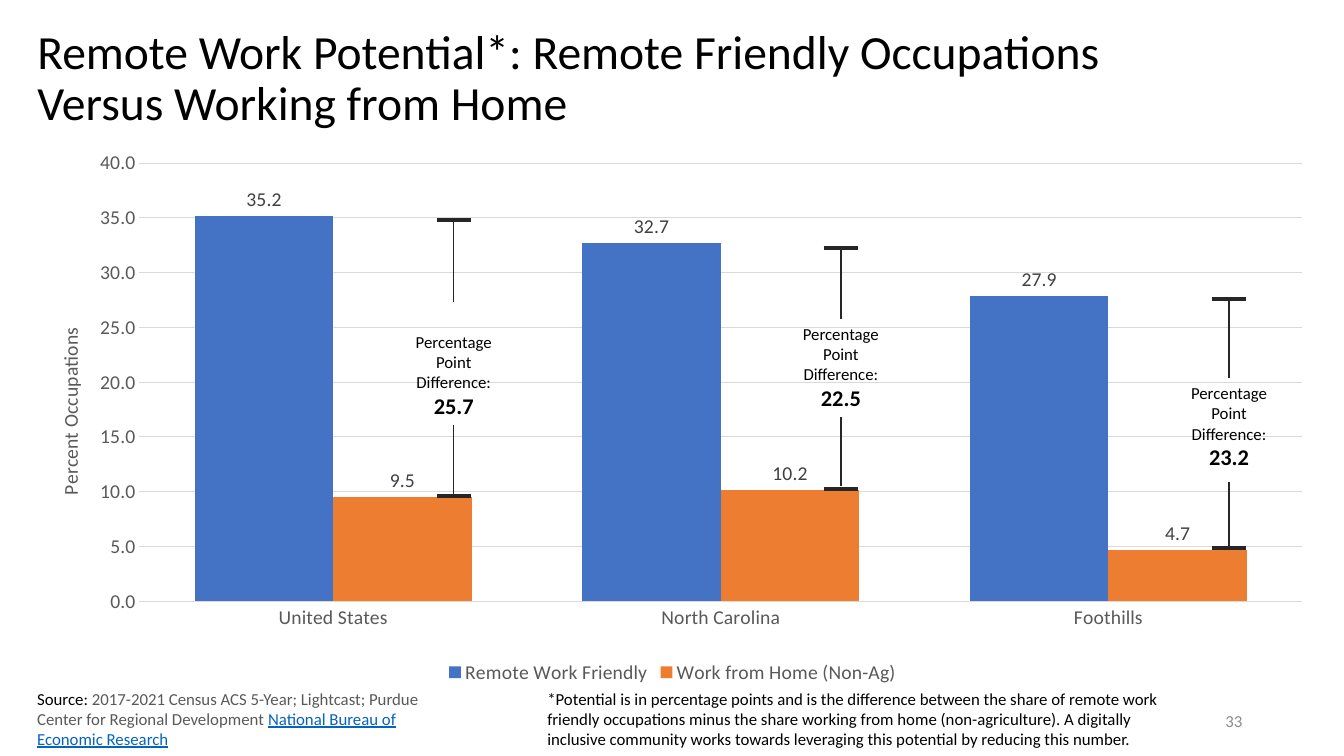
from dataclasses import dataclass
from typing import Any

from lxml.etree import SubElement
from pptx import Presentation
from pptx.chart.data import CategoryChartData
from pptx.dml.color import RGBColor
from pptx.enum.chart import XL_CHART_TYPE, XL_LABEL_POSITION, XL_LEGEND_POSITION, XL_TICK_MARK
from pptx.enum.shapes import MSO_CONNECTOR
from pptx.enum.text import MSO_ANCHOR, MSO_AUTO_SIZE, PP_ALIGN
from pptx.oxml import parse_xml
from pptx.oxml.ns import nsdecls, qn
from pptx.shapes.connector import Connector
from pptx.slide import Slide
from pptx.util import Pt

PX = 9144  # 100 px to the inch
COLORS = {
    "text": "000000",
    "muted": "595959",
    "label": "404040",
    "number": "8C8C8C",
    "link": "0563C1",
    "grid": "D9D9D9",
    "bracket": "262626",
    "remote": "4472C4",
    "home": "ED7D31",
}
TOP, BOTTOM = 0, 2
CAP_WIDTH = 34
NOTE_WIDTH, NOTE_HEIGHT = 132, 98


@dataclass(frozen=True)
class Span:
    text: str
    size: int = 12
    color: str = "text"
    bold: bool = False
    underline: bool = False


@dataclass(frozen=True)
class Gap:
    """Bracket between two bars: cap heights, stem ends and the note between them."""
    value: str
    center: int
    upper_cap: int
    upper_end: int
    note_top: int
    lower_start: int
    lower_end: int
    lower_cap: int


GAPS = [
    Gap("25.7", 450, 218, 300, 324, 424, 491, 492),
    Gap("22.5", 834, 246, 316, 316, 414, 482, 485),
    Gap("23.2", 1219, 297, 375, 375, 478, 543, 544),
]
SOURCE = [
    Span("Source: "),
    Span("2017-2021 Census ACS 5-Year; Lightcast; Purdue Center for Regional Development ",
         color="muted"),
    Span("National Bureau of Economic Research", color="link", underline=True),
]
FOOTNOTE = [Span(
    "*Potential is in percentage points and is the difference between the share of remote work "
    "friendly occupations minus the share working from home (non-agriculture). A digitally "
    "inclusive community works towards leveraging this potential by reducing this number."
)]


def rgb(name: str) -> RGBColor:
    return RGBColor.from_string(COLORS[name])


def set_attributes(target: Any, values: dict[str, Any]) -> None:
    for name, value in values.items():
        setattr(target, name, value)


def style_font(font: Any, size: int, color: str, **extra: bool) -> None:
    set_attributes(font, {"name": "Calibri", "size": Pt(size), **extra})
    font.color.rgb = rgb(color)


def add_text(slide: Slide, box: tuple[int, int, int, int], paragraphs: list[list[Span]],
             align: PP_ALIGN = PP_ALIGN.LEFT, **frame_format: Any) -> Any:
    """Add a wrapping text box; a span that ends in a newline is followed by a line break."""
    shape = slide.shapes.add_textbox(*(length * PX for length in box))
    frame = shape.text_frame
    set_attributes(frame, {"word_wrap": True, "auto_size": MSO_AUTO_SIZE.SHAPE_TO_FIT_TEXT,
                           **frame_format})
    for index, spans in enumerate(paragraphs):
        paragraph = frame.add_paragraph() if index else frame.paragraphs[0]
        paragraph.alignment = align
        for span in spans:
            run = paragraph.add_run()
            run.text = span.text.rstrip("\n")
            style_font(run.font, span.size, span.color, bold=span.bold, underline=span.underline)
            if span.text.endswith("\n"):
                paragraph.add_line_break()
    return shape


def add_line(slide: Slide, start: tuple[int, int], end: tuple[int, int],
             weight: int) -> Connector:
    line = slide.shapes.add_connector(
        MSO_CONNECTOR.STRAIGHT, *(length * PX for length in (*start, *end)))
    line.line.color.rgb = rgb("bracket")
    line.line.width = Pt(weight)
    SubElement(line._element.spPr, qn("a:effectLst"))
    return line


def add_gap(slide: Slide, gap: Gap) -> None:
    note = add_text(
        slide, (gap.center - NOTE_WIDTH // 2, gap.note_top, NOTE_WIDTH, NOTE_HEIGHT),
        [[Span("Percentage\n"), Span("Point")],
         [Span("Difference:\n"), Span(gap.value, size=16, bold=True)]],
        PP_ALIGN.CENTER)
    for cap in (gap.lower_cap, gap.upper_cap):
        left = gap.center - CAP_WIDTH // 2
        add_line(slide, (left, cap), (left + CAP_WIDTH, cap), 3)
    upper = add_line(slide, (gap.center, gap.upper_cap), (gap.center, gap.upper_end), 1)
    lower = add_line(slide, (gap.center, gap.lower_start), (gap.center, gap.lower_end), 1)
    if gap.upper_end == gap.note_top:
        upper.end_connect(note, TOP)
    if abs(gap.lower_start - gap.note_top - NOTE_HEIGHT) <= 2:
        lower.begin_connect(note, BOTTOM)


def place_manually(parent: Any, index: int, **values: Any) -> None:
    """Give a chart part a manual layout in fractions of the chart."""
    for layout in parent.findall(qn("c:layout")):
        parent.remove(layout)
    settings = "".join(f'<c:{name} val="{value}"/>' for name, value in values.items())
    parent.insert(index, parse_xml(
        f'<c:layout {nsdecls("c")}><c:manualLayout>{settings}</c:manualLayout></c:layout>'))


def style_axes(chart: Any) -> None:
    category_axis, value_axis = chart.category_axis, chart.value_axis
    for axis in (category_axis, value_axis):
        set_attributes(axis, {"major_tick_mark": XL_TICK_MARK.NONE,
                              "minor_tick_mark": XL_TICK_MARK.NONE})
        style_font(axis.tick_labels.font, 14, "muted")
    set_attributes(value_axis, {"minimum_scale": 0, "maximum_scale": 40, "major_unit": 5,
                                "has_major_gridlines": True})
    set_attributes(value_axis.tick_labels,
                   {"number_format": "0.0", "number_format_is_linked": False})
    value_axis.format.line.fill.background()
    for line in (category_axis.format.line, value_axis.major_gridlines.format.line):
        line.color.rgb = rgb("grid")
        line.width = Pt(0.75)

    title = value_axis.axis_title
    title.text_frame.text = "Percent Occupations"
    style_font(title.text_frame.paragraphs[0].runs[0].font, 14, "muted", bold=False)
    body = title._element.find(".//" + qn("a:bodyPr"))
    body.set("rot", "-5400000")
    body.set("vert", "horz")
    place_manually(title._element, 1, xMode="edge", yMode="edge", x=0.02, y=0.33)


def add_occupation_chart(slide: Slide) -> None:
    data = CategoryChartData(number_format="0.0")
    data.categories = ["United States", "North Carolina", "Foothills"]
    data.add_series("Remote Work Friendly", [35.2, 32.7, 27.9])
    data.add_series("Work from Home (Non-Ag)", [9.5, 10.2, 4.7])
    chart = slide.shapes.add_chart(
        XL_CHART_TYPE.COLUMN_CLUSTERED,
        *(length * PX for length in (27, 143, 1280, 540)), data).chart
    set_attributes(chart, {"has_title": False, "has_legend": True})
    style_font(chart.font, 14, "text")
    set_attributes(chart.legend,
                   {"position": XL_LEGEND_POSITION.BOTTOM, "include_in_layout": False})
    style_font(chart.legend.font, 14, "muted")
    style_axes(chart)

    plot = chart.plots[0]
    set_attributes(plot, {"gap_width": 80, "overlap": 0, "vary_by_categories": False})
    for series, color in zip(plot.series, ("remote", "home")):
        series.format.fill.solid()
        series.format.fill.fore_color.rgb = rgb(color)
        set_attributes(series.data_labels, {
            "show_value": True, "number_format": "0.0", "number_format_is_linked": False,
            "position": XL_LABEL_POSITION.OUTSIDE_END})
        style_font(series.data_labels.font, 14, "label")
    place_manually(chart._chartSpace.chart.plotArea, 0, layoutTarget="inner", xMode="edge",
                   yMode="edge", x=0.087, y=0.035, w=0.901, h=0.805)


def add_title(slide: Slide) -> None:
    title = slide.shapes.title
    set_attributes(title, {"left": 27 * PX, "top": 15 * PX,
                           "width": 1276 * PX, "height": 128 * PX})
    frame = title.text_frame
    frame.text = "Remote Work Potential*: Remote Friendly Occupations\vVersus Working from Home"
    set_attributes(frame, {"word_wrap": True, "auto_size": MSO_AUTO_SIZE.NONE,
                           "vertical_anchor": MSO_ANCHOR.MIDDLE})
    heading = frame.paragraphs[0]
    set_attributes(heading, {"alignment": PP_ALIGN.LEFT, "line_spacing": 0.9})
    for run in heading.runs:
        style_font(run.font, 34, "text")


def main() -> None:
    presentation = Presentation()
    set_attributes(presentation, {"slide_width": 1333 * PX, "slide_height": 750 * PX})
    slide = presentation.slides.add_slide(presentation.slide_layouts[5])
    add_title(slide)
    add_text(slide, (942, 695, 300, 40), [[Span("33", color="number")]], PP_ALIGN.RIGHT,
             auto_size=MSO_AUTO_SIZE.NONE, vertical_anchor=MSO_ANCHOR.MIDDLE)
    add_occupation_chart(slide)
    for gap in GAPS:
        add_gap(slide, gap)
    add_text(slide, (27, 678, 440, 71), [SOURCE])
    add_text(slide, (533, 678, 654, 71), [FOOTNOTE])
    presentation.save("out.pptx")


if __name__ == "__main__":
    main()
